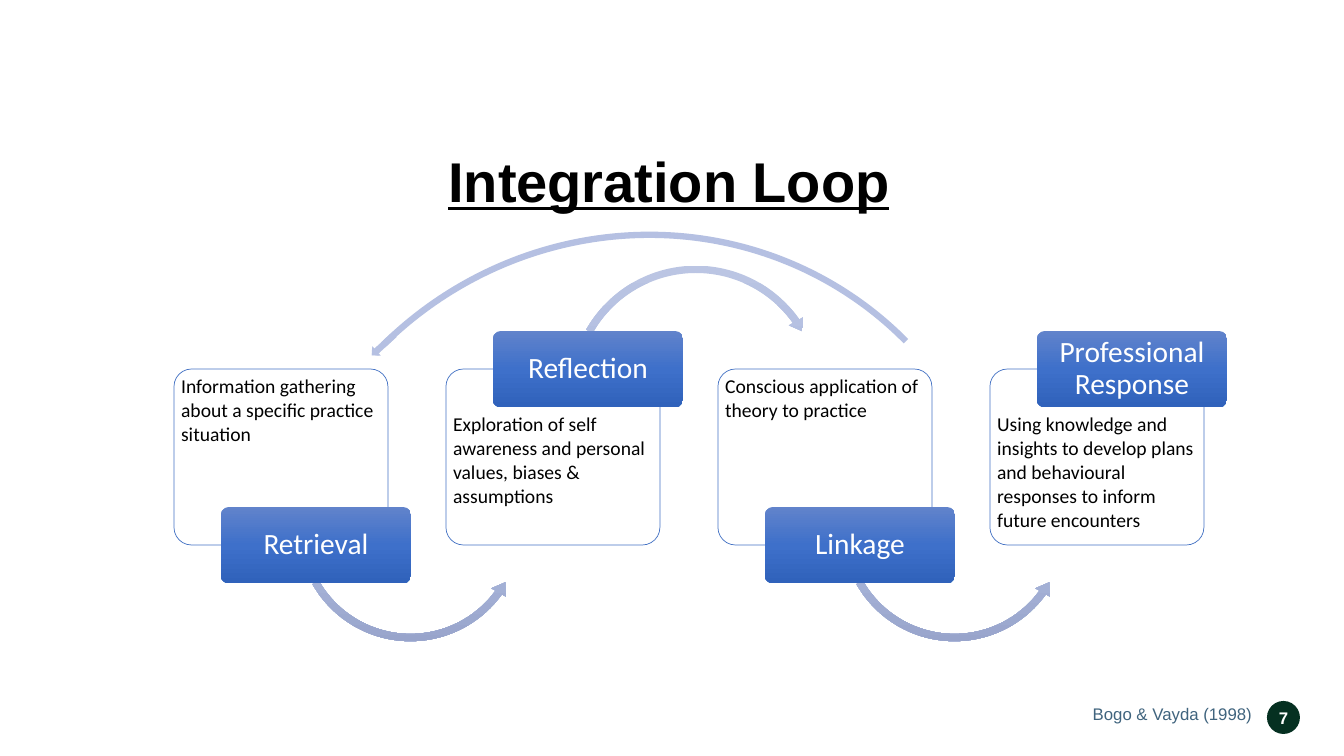
"""Build the Integration Loop slide: four linked stages and a returning arc."""
from copy import deepcopy

from pptx import Presentation
from pptx import util as u
from pptx.dml.color import RGBColor
from pptx.enum import shapes, text
from pptx.oxml.ns import qn

PX = 914400 / 100.8
BLACK = RGBColor(0x00, 0x00, 0x00)
WHITE = RGBColor(0xFF, 0xFF, 0xFF)
GREEN = RGBColor(0x05, 0x30, 0x21)
SLATE = RGBColor(0x40, 0x64, 0x7E)
EDGE = RGBColor(0x44, 0x72, 0xC4)
LAVENDER = RGBColor(0xB5, 0xC0, 0xE2)
LABEL_BLUES = [RGBColor(0x61, 0x83, 0xCB), RGBColor(0x3E, 0x70, 0xCA), RGBColor(0x30, 0x62, 0xBB)]
ARROW_BLUES = [RGBColor(0xBB, 0xC5, 0xE3), RGBColor(0xAE, 0xBB, 0xE0), RGBColor(0x98, 0xA4, 0xCB)]

ROUNDED = shapes.MSO_SHAPE.ROUNDED_RECTANGLE
LEFT, CENTER, RIGHT = text.PP_ALIGN.LEFT, text.PP_ALIGN.CENTER, text.PP_ALIGN.RIGHT
TOP, MIDDLE = text.MSO_ANCHOR.TOP, text.MSO_ANCHOR.MIDDLE

deck = Presentation()
deck.slide_width, deck.slide_height = u.Emu(round(1344 * PX)), u.Emu(round(756 * PX))
slide = deck.slides.add_slide(deck.slide_layouts[6])


def draw(kind, box, fill=None, line=None, width=0):
    """Add a preset shape with no fill, a plain fill or a vertical gradient."""
    shape = slide.shapes.add_shape(kind, *(round(n * PX) for n in box))
    shape.shadow.inherit = False
    if isinstance(fill, list):
        shape.fill.gradient()
        shape.fill.gradient_angle = 270
        stops = shape._element.spPr.find(".//" + qn("a:gsLst"))
        stops.insert(1, deepcopy(stops[0]))
        for stop, color, place in zip(shape.fill.gradient_stops, fill, (0, 0.5, 1)):
            stop.color.rgb = color
            stop.position = place
    elif fill is None:
        shape.fill.background()
    else:
        shape.fill.solid()
        shape.fill.fore_color.rgb = fill
    if line is None:
        shape.line.fill.background()
    else:
        shape.line.color.rgb = line
        shape.line.width = u.Pt(width)
    return shape


def write(shape, lines, font, size, color, align=CENTER, anchor=MIDDLE, inset=(0, 0),
          spacing=1.0, after=0, bold=False, underline=False):
    """Fill a shape with one paragraph per line; inset is side and top."""
    frame = shape.text_frame
    frame.word_wrap = True
    frame.vertical_anchor = anchor
    frame.margin_left = frame.margin_right = round(inset[0] * PX)
    frame.margin_top = round(inset[1] * PX)
    frame.margin_bottom = 0 if anchor == TOP else frame.margin_top
    for number, line in enumerate(lines):
        paragraph = frame.add_paragraph() if number else frame.paragraphs[0]
        paragraph.alignment = align
        paragraph.line_spacing = spacing
        paragraph.space_after = u.Pt(after)
        run = paragraph.add_run()
        run.text = line
        run.font.name, run.font.size = font, u.Pt(size)
        run.font.bold, run.font.underline = bold, underline
        run.font.color.rgb = color


page_badge = draw(shapes.MSO_SHAPE.OVAL, (1267, 701, 33, 33), GREEN)
write(page_badge, ["7"], "Arial", 12, WHITE, bold=True)

return_arc = draw(shapes.MSO_SHAPE.ARC, (264, 240, 750, 729), line=LAVENDER, width=4.5)
return_arc.rotation = 315.4

title = slide.shapes.add_textbox(*(round(n * PX) for n in (394, 140, 550, 93)))
write(title, ["Integration Loop"], "Arial", 40, BLACK, inset=(20, 10), spacing=0.8,
      bold=True, underline=True)

citation = slide.shapes.add_textbox(*(round(n * PX) for n in (816, 701, 436, 29)))
write(citation, ["Bogo & Vayda (1998)"], "Arial", 12, SLATE, align=RIGHT, spacing=0.9)

stages = [
    ("Retrieval", ["Information gathering", "about a specific practice", "situation"]),
    ("Reflection", ["Exploration of self", "awareness and personal", "values, biases &",
                    "assumptions"]),
    ("Linkage", ["Conscious application of", "theory to practice"]),
    ("Professional Response", ["Using knowledge and", "insights to develop plans",
                               "and behavioural", "responses to inform",
                               "future encounters"]),
]
low_arrow = (shapes.MSO_SHAPE.LEFT_CIRCULAR_ARROW, 411, 235,
             (0.031, 3.819, 21.574, 90.245, 0.036))
high_arrow = (shapes.MSO_SHAPE.CIRCULAR_ARROW, 261, 262,
              (0.028, 3.395, 194.85, 125.755, 0.032))

for index, (name, details) in enumerate(stages):
    left = 174 + 272 * index
    label_on_top = index % 2 == 1

    card = draw(ROUNDED, (left, 369, 214, 176), WHITE, EDGE, 0.5)
    card.adjustments[0] = 0.1
    write(card, details, "Calibri", 14, BLACK, align=LEFT, anchor=TOP,
          inset=(2, 2 + 38 * label_on_top), spacing=0.9, after=2.1)

    if index < len(stages) - 1:
        kind, top, size, bends = high_arrow if label_on_top else low_arrow
        loop_arrow = draw(kind, (left + 119, top, size, size), ARROW_BLUES)
        for position, bend in enumerate(bends):
            loop_arrow.adjustments[position] = bend

    label = draw(ROUNDED, (left + 47, 331 if label_on_top else 507, 190, 76), LABEL_BLUES)
    label.adjustments[0] = 0.1
    write(label, [name], "Calibri", 21, WHITE, inset=(4, 3), spacing=0.9)

return_head = draw(shapes.MSO_SHAPE.RIGHT_ARROW, (368, 339, 30, 12), LAVENDER, LAVENDER, 0.25)
return_head.rotation = 137.8

deck.save("out.pptx")
